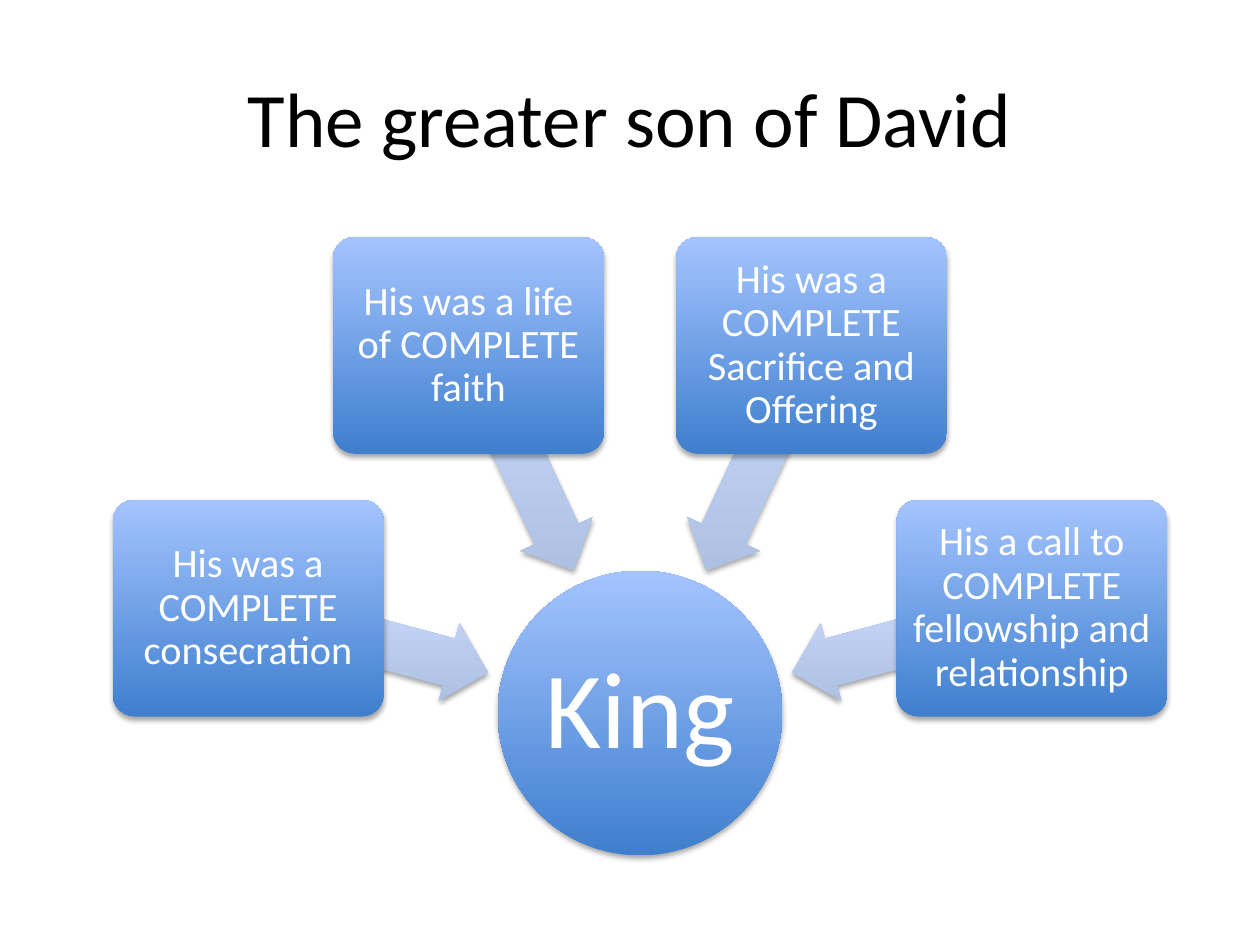
from math import cos, radians, sin

from lxml import etree
from pptx import Presentation
from pptx.dml.color import RGBColor
from pptx.enum import shapes, text
from pptx.oxml import ns
from pptx.util import Inches, Pt

FONT = "Calibri"
COLORS = {
    "title": "000000",
    "label": "FFFFFF",
    "node": ("3F7FCE", "A4C4FF"),
    "arrow": ("ADBFE1", "CCDDFF"),
    "shadow": "000000",
}

HUB = (5.08, 5.66)
HUB_SIZE = 2.26
ARROW_RADIUS, ARROW_SIZE = 2.24, (1.98, 0.64)
BOX_RADIUS, BOX_SIZE = 3.22, (2.15, 1.72)
FIRST_ANGLE, ANGLE_STEP = 195, 50

QUALITIES = [
    "His was a COMPLETE consecration",
    "His was a life of COMPLETE faith",
    "His was a COMPLETE Sacrifice and Offering",
    "His a call to COMPLETE fellowship and relationship",
]


def add_soft_shadow(shape):
    """Put a soft shadow just below the shape."""
    shape.shadow.inherit = False
    effects = shape._element.spPr.find(ns.qn("a:effectLst"))
    shadow = etree.SubElement(
        effects, ns.qn("a:outerShdw"), blurRad=str(Pt(3.1)), dist=str(Pt(1.8)),
        dir="5400000", rotWithShape="0")
    color = etree.SubElement(shadow, ns.qn("a:srgbClr"), val=COLORS["shadow"])
    etree.SubElement(color, ns.qn("a:alpha"), val="35000")


def fill_upward(shape, gradient_colors):
    """Fade from the first colour at the foot to the second at the top."""
    shape.fill.gradient()
    shape.fill.gradient_angle = 90
    for stop, color in zip(shape.fill.gradient_stops, gradient_colors):
        stop.color.rgb = RGBColor.from_string(color)
    shape._element.spPr.find(ns.qn("a:gradFill")).set("rotWithShape", "0")


def add_centered(slide, preset, center, size, gradient_colors):
    (x, y), (width, height) = center, size
    shape = slide.shapes.add_shape(
        preset, Inches(x - width / 2), Inches(y - height / 2),
        Inches(width), Inches(height))
    fill_upward(shape, gradient_colors)
    shape.line.fill.background()
    add_soft_shadow(shape)
    return shape


def write(shape, words, size, color, margin):
    frame = shape.text_frame
    frame.word_wrap = True
    frame.vertical_anchor = text.MSO_ANCHOR.MIDDLE
    frame.margin_left = frame.margin_right = Inches(margin)
    frame.margin_top = frame.margin_bottom = Inches(margin)
    paragraph = frame.paragraphs[0]
    paragraph.text = words
    paragraph.alignment = text.PP_ALIGN.CENTER
    paragraph.font.name = FONT
    paragraph.font.size = Pt(size)
    paragraph.font.color.rgb = RGBColor.from_string(color)
    return paragraph


def around_hub(angle, radius):
    return (HUB[0] + radius * cos(radians(angle)),
            HUB[1] + radius * sin(radians(angle)))


def add_title(slide, words):
    title = slide.shapes.add_textbox(
        Inches(0.5), Inches(0.3), Inches(9), Inches(1.25))
    write(title, words, 44, COLORS["title"], 0.05)


def add_hub(slide, words):
    hub = add_centered(slide, shapes.MSO_SHAPE.OVAL, HUB,
                       (HUB_SIZE, HUB_SIZE), COLORS["node"])
    write(hub, words, 62, COLORS["label"], 0.04).line_spacing = 0.9


def add_arrow(slide, angle):
    arrow = add_centered(slide, shapes.MSO_SHAPE.LEFT_ARROW,
                         around_hub(angle, ARROW_RADIUS), ARROW_SIZE,
                         COLORS["arrow"])
    arrow.adjustments[0] = 0.6
    arrow.adjustments[1] = 0.5
    arrow.rotation = angle


def add_quality(slide, words, angle):
    box = add_centered(slide, shapes.MSO_SHAPE.ROUNDED_RECTANGLE,
                       around_hub(angle, BOX_RADIUS), BOX_SIZE,
                       COLORS["node"])
    box.adjustments[0] = 0.1
    write(box, words, 23, COLORS["label"], 0.05).line_spacing = 0.9


def main():
    deck = Presentation()
    deck.slide_width, deck.slide_height = Inches(10), Inches(7.5)
    slide = deck.slides.add_slide(deck.slide_layouts[6])
    add_title(slide, "The greater son of David")
    add_hub(slide, "King")
    for index, quality in enumerate(QUALITIES):
        angle = FIRST_ANGLE + index * ANGLE_STEP
        add_arrow(slide, angle)
        add_quality(slide, quality, angle)
    deck.save("out.pptx")


if __name__ == "__main__":
    main()
